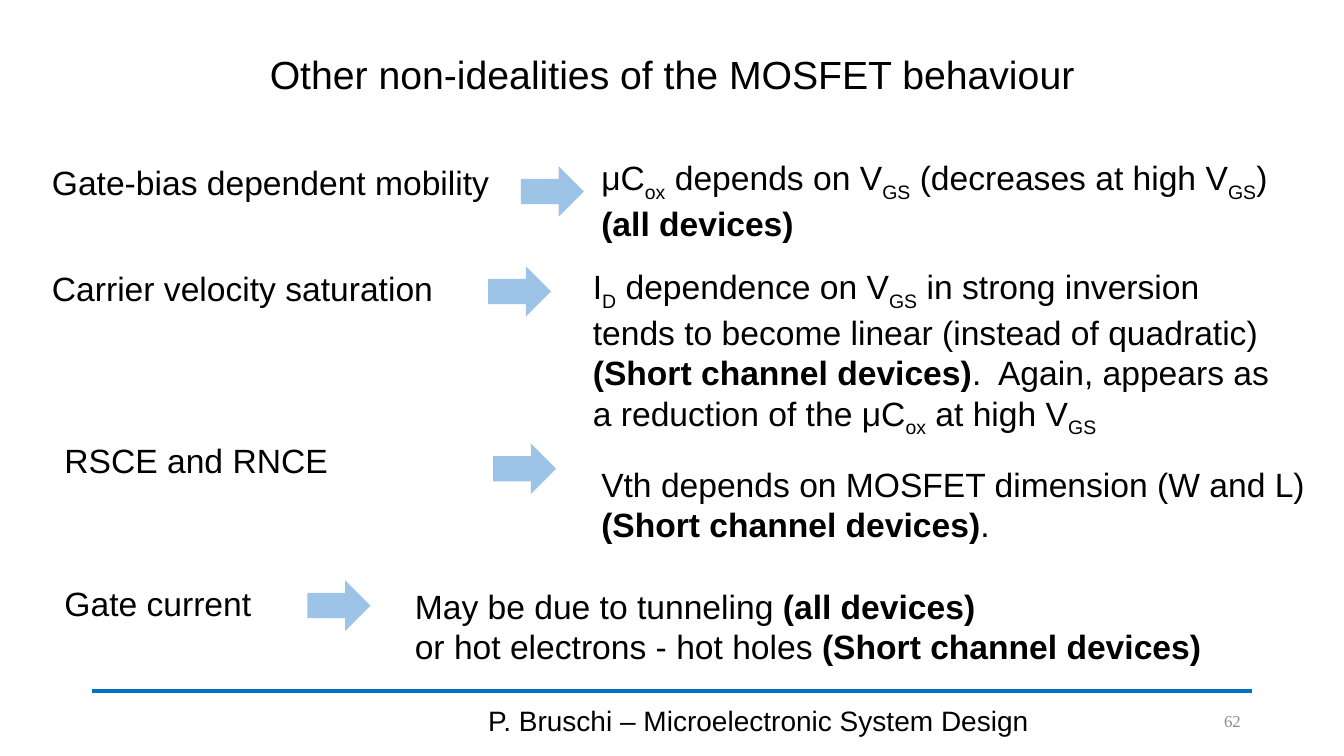
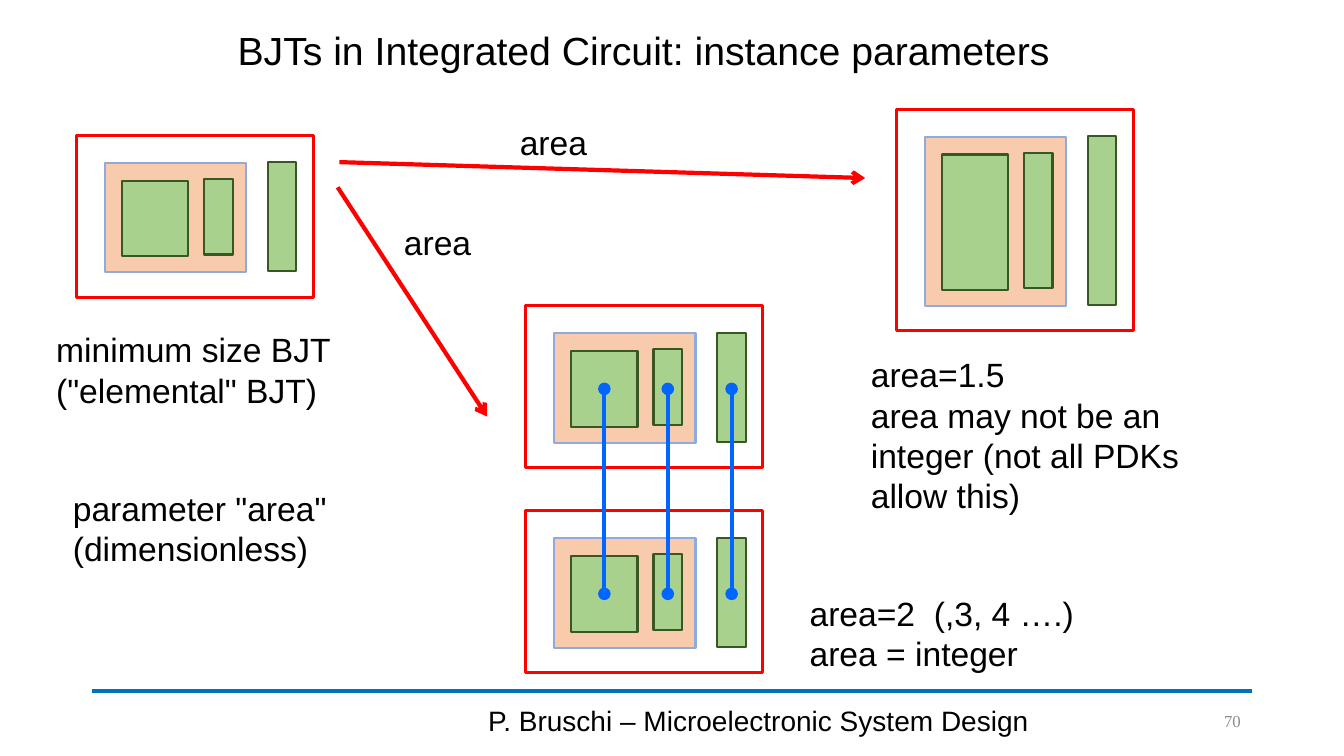
from dataclasses import dataclass

from lxml import etree
from pptx import Presentation
from pptx.dml.color import RGBColor
from pptx.enum.shapes import MSO_CONNECTOR, MSO_SHAPE
from pptx.enum.text import MSO_ANCHOR, MSO_AUTO_SIZE, PP_ALIGN
from pptx.oxml.ns import qn
from pptx.util import Inches, Pt

RECT, ARROW = MSO_SHAPE.RECTANGLE, MSO_SHAPE.RIGHT_ARROW
STRAIGHT = MSO_CONNECTOR.STRAIGHT
LEFT, CENTER, RIGHT = PP_ALIGN.LEFT, PP_ALIGN.CENTER, PP_ALIGN.RIGHT
TOP, MIDDLE = MSO_ANCHOR.TOP, MSO_ANCHOR.MIDDLE
GROW, FIXED = MSO_AUTO_SIZE.SHAPE_TO_FIT_TEXT, MSO_AUTO_SIZE.NONE

BLACK = RGBColor(0x00, 0x00, 0x00)
GRAY = RGBColor(0x8C, 0x8C, 0x8C)
RED = RGBColor(0xFF, 0x00, 0x00)
BAND = RGBColor(0x00, 0x70, 0xC0)
WIRE = RGBColor(0x00, 0x66, 0xFF)
SKY = RGBColor(0x9D, 0xC3, 0xE6)
PEACH = RGBColor(0xF8, 0xCB, 0xAD)
EDGE = RGBColor(0x8F, 0xAA, 0xDC)
GREEN = RGBColor(0xA9, 0xD1, 0x8E)
MOSS = RGBColor(0x38, 0x57, 0x23)

# The slide is a grid of 160 columns by 90 rows
COLS, ROWS = 160, 90
WIDTH, HEIGHT = Inches(13.33), Inches(7.5)


@dataclass(frozen=True)
class Style:
    font: dict
    frame: dict
    para: dict


def style(size: int, face: str = "Arial", color: RGBColor = BLACK,
          align: int = CENTER, space: float = 1.0, body: bool = False) -> Style:
    return Style(
        {"size": Pt(size), "name": face, "color": color},
        {"word_wrap": not body, "auto_size": GROW if body else FIXED,
         "vertical_anchor": TOP if body else MIDDLE},
        {"alignment": align, "line_spacing": space})


HEAD = style(28, space=0.9)
FOOT = style(20)
PAGE = style(12, "Times New Roman", GRAY, RIGHT)
BODY = style(24, align=LEFT, body=True)


@dataclass(frozen=True)
class Note:
    """Text at a column and row; *bold* and _subscript_ are marked."""
    col: float
    row: float
    wide: float
    text: str


@dataclass(frozen=True)
class Part:
    """A layer of the transistor, placed from its outer corner."""
    col: float
    row: float
    wide: float
    high: float
    fill: RGBColor | None
    edge: RGBColor
    width: float = 1.5


@dataclass(frozen=True)
class Line:
    start: tuple[float, float]
    end: tuple[float, float]
    color: RGBColor
    width: float = 3
    head: str = ""
    tail: str = ""


# Slide 1: effects, arrows and their results
ITEMS = [
    Note(5, 18.7, 58.3, "Gate-bias dependent mobility"),
    Note(70.4, 18.1, 85.3,
         "μC_ox_ depends on V_GS_ (decreases at high V_GS_)\n*(all devices)*"),
    Note(5, 31.3, 49.3, "Carrier velocity saturation"),
    Note(69.4, 31.1, 84.8,
         "I_D_ dependence on V_GS_ in strong inversion\n"
         "tends to become linear (instead of quadratic)\n"
         "*(Short channel devices)*.  Again, appears as\n"
         "a reduction of the μC_ox_ at high V_GS_"),
    Note(6.5, 51.8, 34.1, "RSCE and RNCE"),
    Note(70.4, 54.6, 87,
         "Vth depends on MOSFET dimension (W and L)\n*(Short channel devices)*."),
    Note(6.5, 68.8, 26, "Gate current"),
    Note(48.2, 69.1, 97,
         "May be due to tunneling *(all devices)*\n"
         "or hot electrons - hot holes *(Short channel devices)*"),
]
POINTS = [(62, 19.8), (58.1, 31.7), (58.7, 52.8), (36.6, 69.1)]

# Slide 2: transistor layers, sites with added rows, labels
PADS = [
    Part(5.4, 5.4, 7.9, 9, GREEN, MOSS),
    Part(15.2, 5.2, 3.4, 9, GREEN, MOSS),
    Part(22.8, 3.2, 3.4, 13, GREEN, MOSS),
]
PARTS = [
    Part(0, 0, 28.2, 19.3, None, RED, 2.25),
    Part(3.4, 3.3, 16.8, 13, PEACH, EDGE),
    *PADS,
]
PAIR, UPPER, LOWER = 62.6, 36.4, 60.8
SITES = [(9.1, 16.1, 0), (106.7, 13, 7.1), (PAIR, LOWER, 0), (PAIR, UPPER, 0)]
MID = PADS[0].row + PADS[0].high / 2
LINKS = [
    Line((PAIR + pad.col + pad.wide / 2, UPPER + MID),
         (PAIR + pad.col + pad.wide / 2, LOWER + MID),
         WIRE, head="oval", tail="oval")
    for pad in PADS
]
PATHS = [
    Line((40.4, 19.3), (103, 21.2), RED, tail="arrow"),
    Line((40.2, 22.3), (58, 49.6), RED, tail="arrow"),
]
LABELS = [
    Note(5.5, 38.6, 35.4, 'minimum size BJT\n("elemental" BJT)'),
    Note(7.5, 57.5, 32.9, 'parameter "area"\n(dimensionless)'),
    Note(60.7, 13.9, 10.6, "area"),
    Note(46.9, 25.8, 10.6, "area"),
    Note(95.2, 70, 34.2, "area=2  (,3, 4 ….)\narea = integer"),
    Note(102.5, 41.6, 40.6,
         "area=1.5\narea may not be an\ninteger (not all PDKs\nallow this)"),
]


def across(cols: float) -> int:
    return round(WIDTH * cols / COLS)


def down(rows: float) -> int:
    return round(HEIGHT * rows / ROWS)


def place(col: float, row: float, wide: float, high: float) -> tuple:
    return across(col), down(row), across(wide), down(high)


def apply(target, values: dict) -> None:
    for key, value in values.items():
        if key == "color":
            target.color.rgb = value
        else:
            setattr(target, key, value)


def write(para, text: str, look: Style) -> None:
    """Add runs, switching bold and subscript at their marks."""
    apply(para, look.para)
    for i, piece in enumerate(text.split("*")):
        for j, bit in enumerate(piece.split("_")):
            if not bit:
                continue
            run = para.add_run()
            run.text = bit
            apply(run.font, look.font | {"bold": i % 2 == 1})
            if j % 2:
                run._r.get_or_add_rPr().set("baseline", "-25000")


def draw_text(slide, note: Note, look: Style = BODY, high: float = 0) -> None:
    rows = note.text.split("\n")
    high = high or 1.15 + 4.85 * len(rows)
    box = slide.shapes.add_textbox(*place(note.col, note.row, note.wide, high))
    frame = box.text_frame
    apply(frame, look.frame)
    for i, row in enumerate(rows):
        write(frame.add_paragraph() if i else frame.paragraphs[0], row, look)


def draw_shape(slide, kind: int, part: Part) -> None:
    shape = slide.shapes.add_shape(
        kind, *place(part.col, part.row, part.wide, part.high))
    shape.shadow.inherit = False
    if part.fill is None:
        shape.fill.background()
    else:
        shape.fill.solid()
        shape.fill.fore_color.rgb = part.fill
    if part.width:
        apply(shape.line, {"color": part.edge, "width": Pt(part.width)})
    else:
        shape.line.fill.background()


def draw_line(slide, line: Line) -> None:
    (x1, y1), (x2, y2) = line.start, line.end
    link = slide.shapes.add_connector(
        STRAIGHT, across(x1), down(y1), across(x2), down(y2))
    apply(link.line, {"color": line.color, "width": Pt(line.width)})
    props = link._element.spPr
    for tag, kind in (("a:headEnd", line.head), ("a:tailEnd", line.tail)):
        if kind:
            etree.SubElement(props.find(qn("a:ln")), qn(tag), type=kind)
    etree.SubElement(props, qn("a:effectLst"))


def draw_cell(slide, col: float, row: float, extra: float) -> None:
    """Draw one transistor, with extra rows in each layer."""
    for part in PARTS:
        draw_shape(slide, RECT, Part(
            col + part.col, row + part.row, part.wide, part.high + extra,
            part.fill, part.edge, part.width))


def new_slide(deck, title: str, col: float, row: float, page: int):
    """Add a slide with the shared band, title and footer."""
    slide = deck.slides.add_slide(deck.slide_layouts[6])
    draw_line(slide, Line((11, 82.3), (149, 82.3), BAND, 2.75))
    draw_text(slide, Note(col, row, 138, title), HEAD, 8.6)
    draw_text(slide, Note(53, 83.4, 74.6,
                          "P. Bruschi – Microelectronic System Design"), FOOT, 4.8)
    draw_text(slide, Note(137.4, 83.4, 11.5, str(page)), PAGE, 4.8)
    return slide


def main() -> None:
    deck = Presentation()
    deck.slide_width, deck.slide_height = WIDTH, HEIGHT

    # Effects
    slide = new_slide(deck, "Other non-idealities of the MOSFET behaviour",
                      11, 4.8, 62)
    for note in ITEMS:
        draw_text(slide, note)
    for col, row in POINTS:
        draw_shape(slide, ARROW, Part(col, row, 7.5, 6, SKY, SKY, 0))

    # Transistors
    slide = new_slide(deck, "BJTs in Integrated Circuit: instance parameters",
                      7.6, 2, 70)
    for site in SITES:
        draw_cell(slide, *site)
    for line in LINKS + PATHS:
        draw_line(slide, line)
    for note in LABELS:
        draw_text(slide, note)

    deck.save("out.pptx")


if __name__ == "__main__":
    main()
